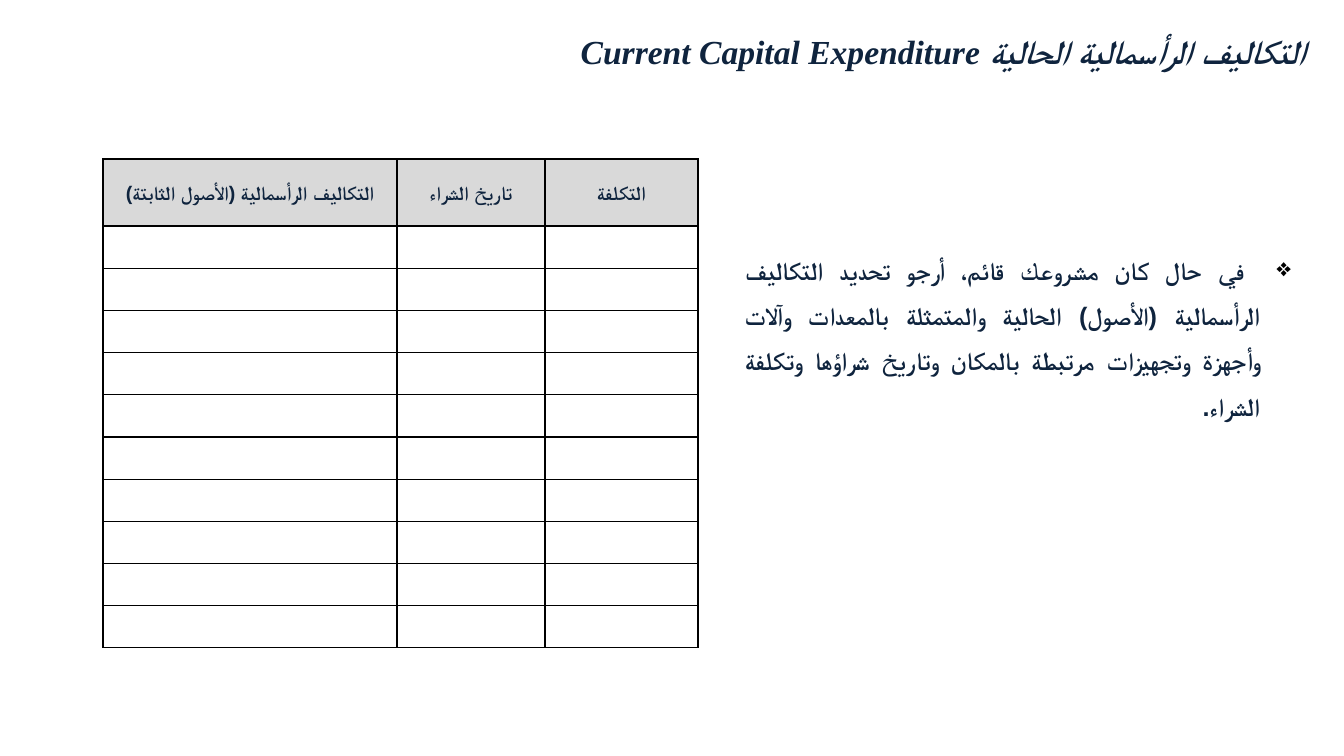
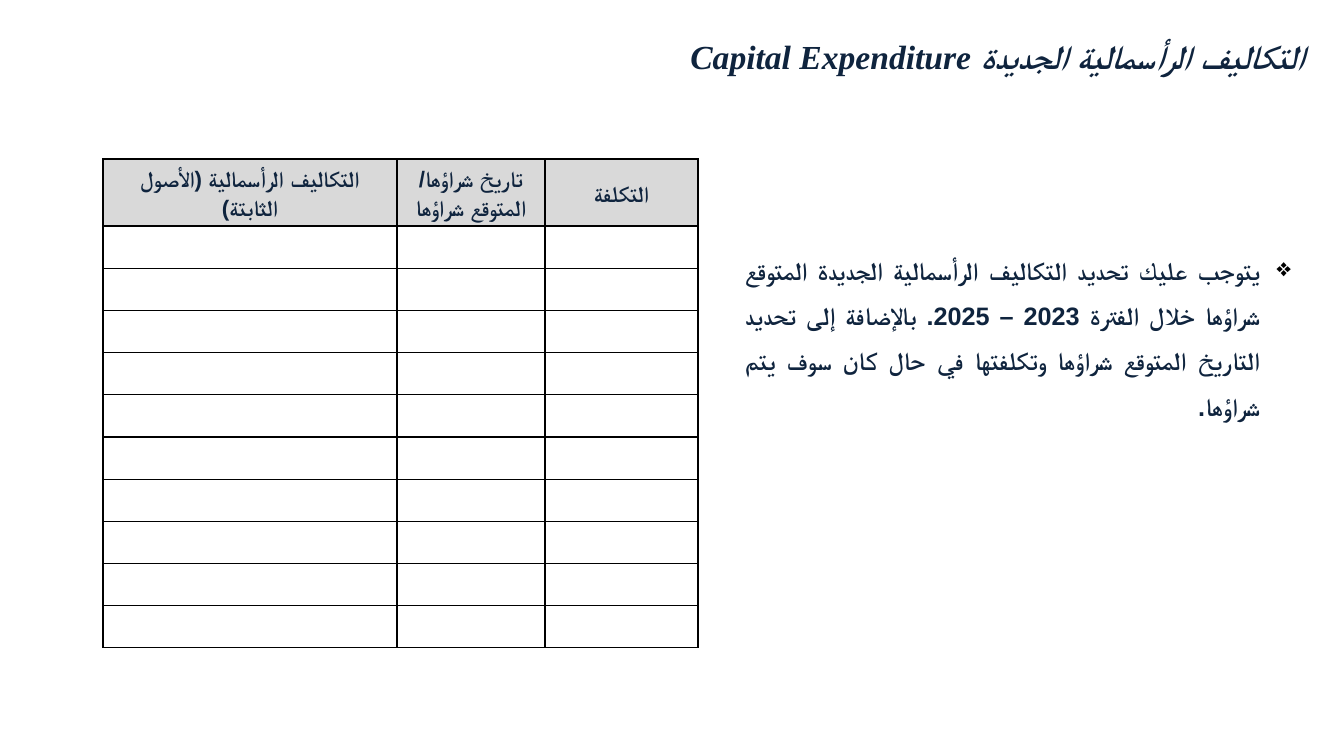
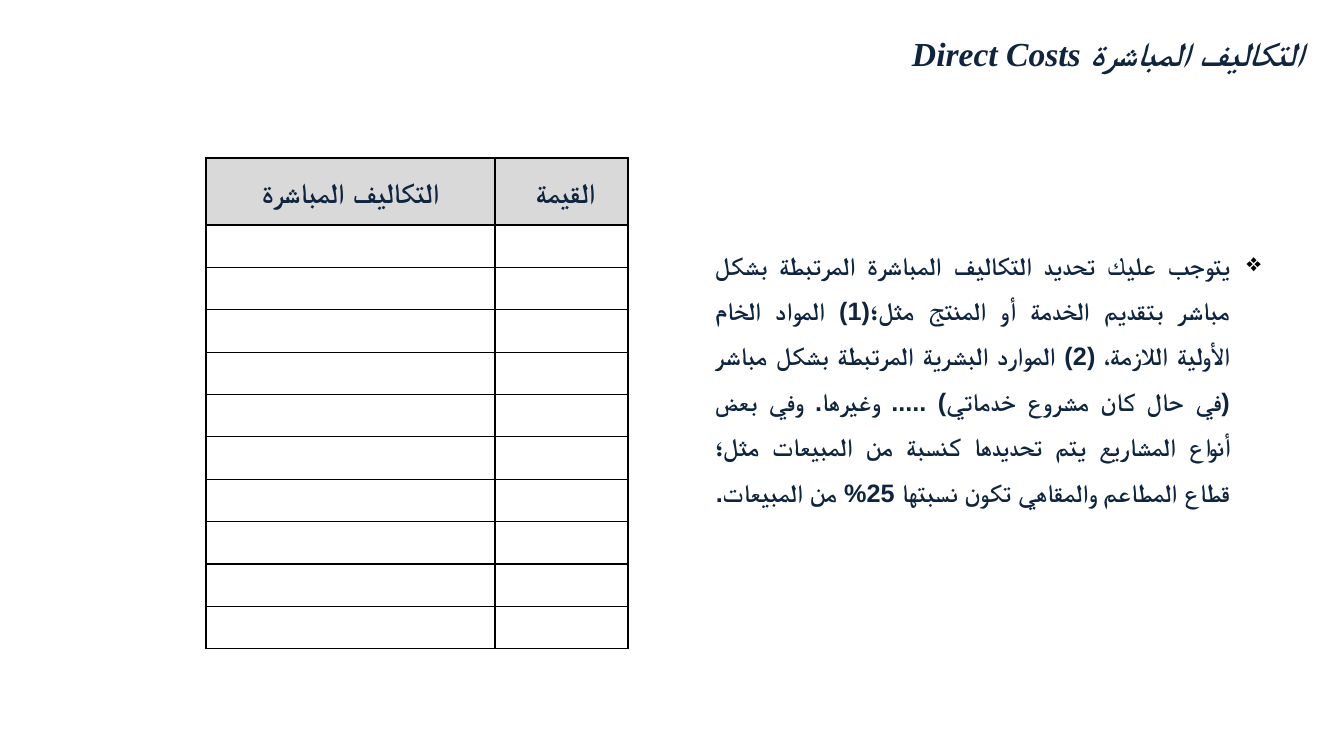
from lxml import etree
from pptx import Presentation
from pptx.dml.color import RGBColor
from pptx.enum.text import MSO_ANCHOR as Anchor, MSO_AUTO_SIZE as AutoSize, PP_ALIGN as Align
from pptx.oxml.ns import qn
from pptx.util import Pt

SCALE = 914400 / 100.8  # EMU in one px
COLORS = {"ink": "0F243E", "header": "D9D9D9", "line": "000000"}
SERIF, SANS, BODY = "Times New Roman", "Arial", "Calibri"
HEADER_HEIGHT, BLANK_ROWS = 67, 10
BULLET_INDENT = 31


def px(length):
    return round(length * SCALE)


def style(paragraph, align, size, latin, rtl=True):
    """Set direction, alignment and fonts, including the Arabic font."""
    paragraph.alignment = align
    font = paragraph.font
    font.size, font.bold, font.name = Pt(size), True, latin
    font.color.rgb = RGBColor.from_string(COLORS["ink"])
    properties = paragraph._p.get_or_add_pPr()
    properties.set("rtl", "1" if rtl else "0")
    defaults = properties.find(qn("a:defRPr"))
    etree.SubElement(defaults, qn("a:cs"), typeface=SANS)


# Content: boxes are left, top, width, height; headers are text and direction
SLIDES = [
    {
        "title": ("التكاليف الرأسمالية الحالية ", "Current Capital Expenditure"),
        "title_at": (355, 26),
        "body": " في حال كان مشروعك قائم، أرجو تحديد التكاليف الرأسمالية (الأصول) الحالية "
                "والمتمثلة بالمعدات وآلات وأجهزة وتجهيزات مرتبطة بالمكان وتاريخ شراؤها "
                "وتكلفة الشراء.",
        "body_box": (735, 235, 566, 194),
        "body_font": SERIF,
        "headers": [("التكاليف الرأسمالية (الأصول الثابتة)", False),
                    ("تاريخ الشراء", True), ("التكلفة", True)],
        "header_size": 14,
        "table_at": (103, 159),
        "columns": (294, 148, 153),
        "table_height": 489,
    },
    {
        "title": ("التكاليف الرأسمالية الجديدة ", "Capital Expenditure"),
        "title_at": (354, 31),
        "body": "يتوجب عليك تحديد التكاليف الرأسمالية الجديدة المتوقع شراؤها خلال الفترة "
                "2023 – 2025. بالإضافة إلى تحديد التاريخ المتوقع شراؤها وتكلفتها في حال "
                "كان سوف يتم شراؤها. ",
        "body_box": (735, 235, 566, 194),
        "body_font": BODY,
        "headers": [("التكاليف الرأسمالية (الأصول الثابتة)", False),
                    ("تاريخ شراؤها/ المتوقع شراؤها", True), ("التكلفة", True)],
        "header_size": 16,
        "table_at": (103, 159),
        "columns": (294, 148, 153),
        "table_height": 489,
    },
    {
        "title": ("التكاليف المباشرة ", "Direct Costs"),
        "title_at": (353, 28),
        "body": "يتوجب عليك تحديد التكاليف المباشرة المرتبطة بشكل مباشر بتقديم الخدمة أو "
                "المنتج مثل؛(1) المواد الخام الأولية اللازمة، (2) الموارد البشرية المرتبطة "
                "بشكل مباشر (في حال كان مشروع خدماتي) ..... وغيرها. وفي بعض أنواع المشاريع "
                "يتم تحديدها كنسبة من المبيعات مثل؛ قطاع المطاعم والمقاهي تكون نسبتها 25% "
                "من المبيعات.",
        "body_box": (705, 230, 566, 285),
        "body_font": BODY,
        "headers": [("التكاليف المباشرة", True), ("القيمة ", True)],
        "header_size": 20,
        "table_at": (206, 158),
        "columns": (289, 133),
        "table_height": 491,
    },
]

presentation = Presentation()
presentation.slide_width, presentation.slide_height = px(1344), px(756)

for content in SLIDES:
    slide = presentation.slides.add_slide(presentation.slide_layouts[6])

    # Title and body boxes
    frames = []
    for box in ((*content["title_at"], 960, 50), content["body_box"]):
        frame = slide.shapes.add_textbox(*map(px, box)).text_frame
        frame.word_wrap = True
        frame.auto_size = AutoSize.SHAPE_TO_FIT_TEXT
        frames.append(frame)

    # Title: Arabic, then English
    paragraph = frames[0].paragraphs[0]
    style(paragraph, Align.JUSTIFY, 24, SERIF)
    paragraph.font.italic = True
    for text, font_name in zip(content["title"], (SANS, SERIF)):
        run = paragraph.add_run()
        run.text, run.font.name = text, font_name

    # Bulleted body
    paragraph = frames[1].paragraphs[0]
    paragraph.text = content["body"]
    paragraph.line_spacing = 1.5
    properties = paragraph._p.get_or_add_pPr()
    properties.set("marL", str(px(BULLET_INDENT)))
    properties.set("indent", str(-px(BULLET_INDENT)))
    bullet_color = etree.SubElement(properties, qn("a:buClr"))
    etree.SubElement(bullet_color, qn("a:srgbClr"), val=COLORS["line"])
    etree.SubElement(properties, qn("a:buChar"), char="❖")
    style(paragraph, Align.JUSTIFY, 18, content["body_font"])

    # Table grid
    columns, height = content["columns"], content["table_height"]
    table = slide.shapes.add_table(
        BLANK_ROWS + 1, len(columns),
        *map(px, (*content["table_at"], sum(columns), height))).table
    table.first_row = table.horz_banding = False
    for column, width in zip(table.columns, columns):
        column.width = px(width)
    for row in table.rows:
        row.height = px((height - HEADER_HEIGHT) / BLANK_ROWS)
    table.rows[0].height = px(HEADER_HEIGHT)

    # Cell borders and margins
    for cell in table.iter_cells():
        cell.margin_left = cell.margin_right = px(7)
        cell.margin_top = cell.margin_bottom = 0
        cell.vertical_anchor = Anchor.MIDDLE
        for side in ("lnL", "lnR", "lnT", "lnB"):
            line = etree.SubElement(cell._tc.get_or_add_tcPr(), qn(f"a:{side}"), w=str(Pt(1)))
            fill = etree.SubElement(line, qn("a:solidFill"))
            etree.SubElement(fill, qn("a:srgbClr"), val=COLORS["line"])
        cell.fill.background()

    # Header row
    for cell, (text, rtl) in zip(table.rows[0].cells, content["headers"]):
        cell.fill.solid()
        cell.fill.fore_color.rgb = RGBColor.from_string(COLORS["header"])
        paragraph = cell.text_frame.paragraphs[0]
        paragraph.text = text
        paragraph.line_spacing = 1.15
        style(paragraph, Align.CENTER, content["header_size"], SERIF, rtl)

presentation.save("out.pptx")
